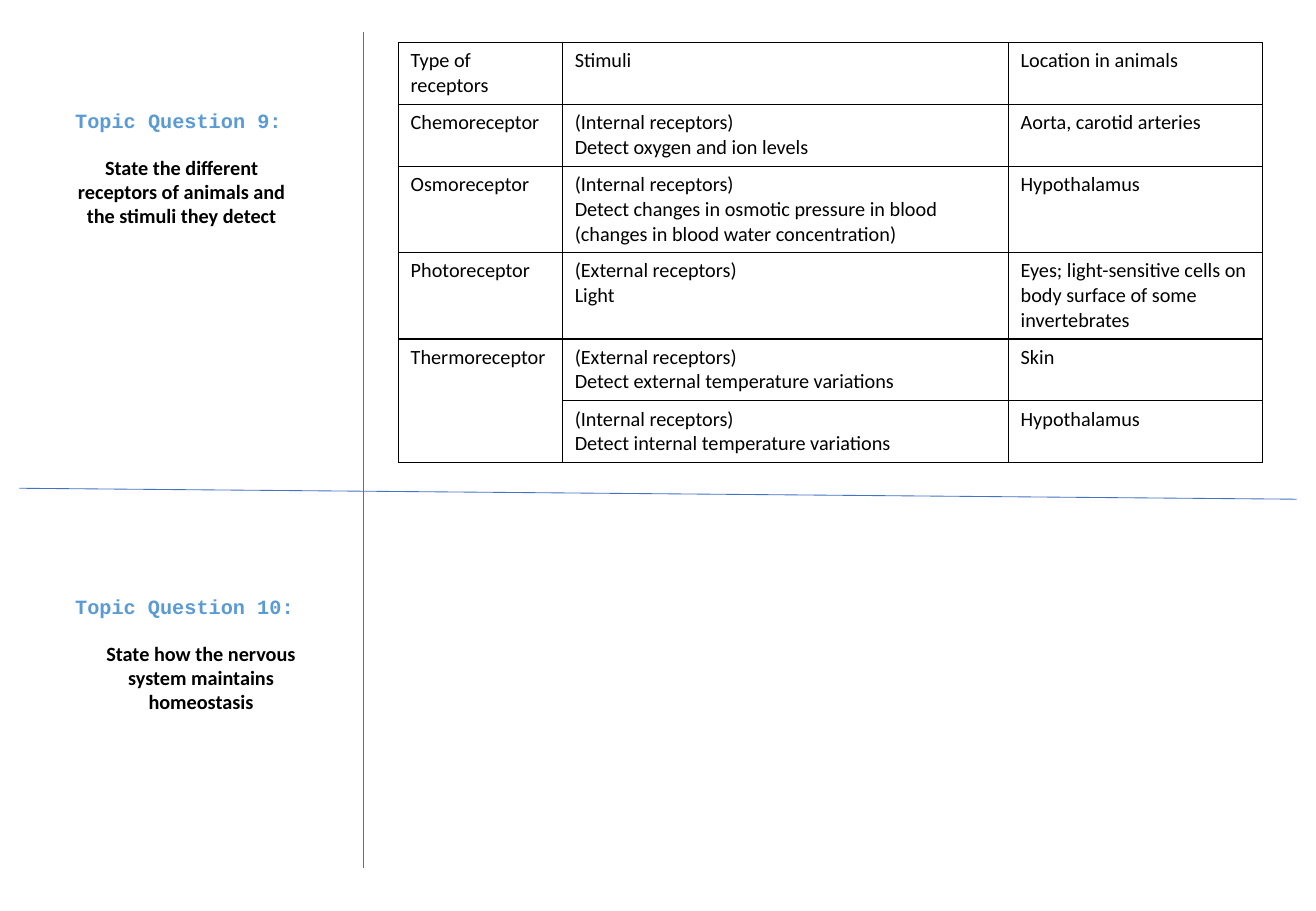
"""Build a revision slide with two topic questions and a table of animal receptors."""
import dataclasses

import lxml.etree
import pptx
import pptx.dml.color
import pptx.enum.shapes
import pptx.enum.text
import pptx.oxml.ns
import pptx.presentation
import pptx.shapes.autoshape
import pptx.slide
import pptx.table
import pptx.text.text
import pptx.util

EMU_PER_PX = 9144


@dataclasses.dataclass(frozen=True)
class Theme:
    heading: str = "5B9BD5"
    text: str = "000000"
    divider: str = "4472C4"
    border: str = "000000"
    heading_font: str = "Courier New"
    body_font: str = "Calibri"
    text_size: int = 12
    heading_gap: float = 13.5
    divider_width: float = 0.5
    border_width: float = 1


@dataclasses.dataclass(frozen=True)
class Divider:
    start: tuple[int, int]
    end: tuple[int, int]


@dataclasses.dataclass(frozen=True)
class Question:
    heading: str
    body: str
    top: int
    width: int


@dataclasses.dataclass(frozen=True)
class Receptor:
    name: str
    stimuli: str
    location: str
    height: int


THEME = Theme()
SLIDE_SIZE = (1083, 750)
QUESTION_LEFT = 52
QUESTION_HEIGHT = 112
TABLE_LEFT, TABLE_TOP = 328, 35
COLUMN_WIDTHS = (135, 367, 209)
TWO_LINES, THREE_LINES = 51, 71

DIVIDERS = (
    Divider((299, 26), (299, 715)),
    Divider((16, 402), (1067, 411)),
)
QUESTIONS = (
    Question(
        "Topic Question 9:",
        "State the different receptors of animals and the stimuli they detect",
        84, 195,
    ),
    Question(
        "Topic Question 10:",
        "State how the nervous system maintains homeostasis",
        484, 227,
    ),
)
RECEPTORS = (
    Receptor("Type of receptors", "Stimuli", "Location in animals", TWO_LINES),
    Receptor("Chemoreceptor", "(Internal receptors)\nDetect oxygen and ion levels",
             "Aorta, carotid arteries", TWO_LINES),
    Receptor("Osmoreceptor",
             "(Internal receptors)\nDetect changes in osmotic pressure in blood "
             "(changes in blood water concentration)",
             "Hypothalamus", THREE_LINES),
    Receptor("Photoreceptor", "(External receptors)\nLight",
             "Eyes; light-sensitive cells on body surface of some invertebrates",
             THREE_LINES),
    Receptor("Thermoreceptor",
             "(External receptors)\nDetect external temperature variations",
             "Skin", TWO_LINES),
    Receptor("", "(Internal receptors)\nDetect internal temperature variations",
             "Hypothalamus", TWO_LINES),
)


def px(length: int) -> pptx.util.Emu:
    return pptx.util.Emu(length * EMU_PER_PX)


def rgb(colour: str) -> pptx.dml.color.RGBColor:
    return pptx.dml.color.RGBColor.from_string(colour)


def write(
    paragraph: pptx.text.text._Paragraph,
    text: str,
    *,
    font: str = THEME.body_font,
    colour: str = THEME.text,
    bold: bool = False,
    centred: bool = False,
    space_before: float = 0,
) -> None:
    alignment = pptx.enum.text.PP_ALIGN
    paragraph.alignment = alignment.CENTER if centred else alignment.LEFT
    paragraph.space_before = pptx.util.Pt(space_before)
    run = paragraph.add_run()
    run.text = text
    run.font.name = font
    run.font.size = pptx.util.Pt(THEME.text_size)
    run.font.bold = bold
    run.font.color.rgb = rgb(colour)


def draw_divider(slide: pptx.slide.Slide, divider: Divider) -> None:
    connector = slide.shapes.add_connector(
        pptx.enum.shapes.MSO_CONNECTOR.STRAIGHT,
        *map(px, divider.start + divider.end),
    )
    connector.line.color.rgb = rgb(THEME.divider)
    connector.line.width = pptx.util.Pt(THEME.divider_width)
    lxml.etree.SubElement(connector._element.spPr, pptx.oxml.ns.qn("a:effectLst"))


def draw_question(slide: pptx.slide.Slide, question: Question) -> None:
    shape = slide.shapes.add_textbox(
        px(QUESTION_LEFT), px(question.top), px(question.width), px(QUESTION_HEIGHT)
    )
    frame = shape.text_frame
    frame.word_wrap = True
    write(frame.paragraphs[0], question.heading, font=THEME.heading_font,
          colour=THEME.heading, bold=True)
    write(frame.add_paragraph(), question.body, bold=True, centred=True,
          space_before=THEME.heading_gap)


def format_cell(cell: pptx.table._Cell) -> None:
    properties = cell._tc.get_or_add_tcPr()
    for side in ("lnL", "lnR", "lnT", "lnB"):
        line = lxml.etree.SubElement(
            properties, pptx.oxml.ns.qn(f"a:{side}"),
            w=str(pptx.util.Pt(THEME.border_width)),
        )
        fill = lxml.etree.SubElement(line, pptx.oxml.ns.qn("a:solidFill"))
        lxml.etree.SubElement(fill, pptx.oxml.ns.qn("a:srgbClr"), val=THEME.border)
    cell.fill.background()


def draw_table(slide: pptx.slide.Slide, receptors: tuple[Receptor, ...]) -> None:
    table = slide.shapes.add_table(
        len(receptors), len(COLUMN_WIDTHS), px(TABLE_LEFT), px(TABLE_TOP),
        px(sum(COLUMN_WIDTHS)), px(sum(receptor.height for receptor in receptors)),
    ).table
    table.first_row = table.horz_banding = False
    for column, width in zip(table.columns, COLUMN_WIDTHS):
        column.width = px(width)
    for index, (row, receptor) in enumerate(zip(table.rows, receptors)):
        row.height = px(receptor.height)
        texts = (receptor.name, receptor.stimuli, receptor.location)
        for cell, text in zip(row.cells, texts):
            format_cell(cell)
            frame = cell.text_frame
            for number, line in enumerate(text.splitlines()):
                paragraph = frame.add_paragraph() if number else frame.paragraphs[0]
                write(paragraph, line)
        if not receptor.name:
            table.cell(index - 1, 0).merge(table.cell(index, 0))


def main() -> None:
    presentation = pptx.Presentation()
    presentation.slide_width, presentation.slide_height = map(px, SLIDE_SIZE)
    slide = presentation.slides.add_slide(presentation.slide_layouts[6])
    for divider in DIVIDERS:
        draw_divider(slide, divider)
    for question in QUESTIONS:
        draw_question(slide, question)
    draw_table(slide, RECEPTORS)
    presentation.save("out.pptx")


if __name__ == "__main__":
    main()
